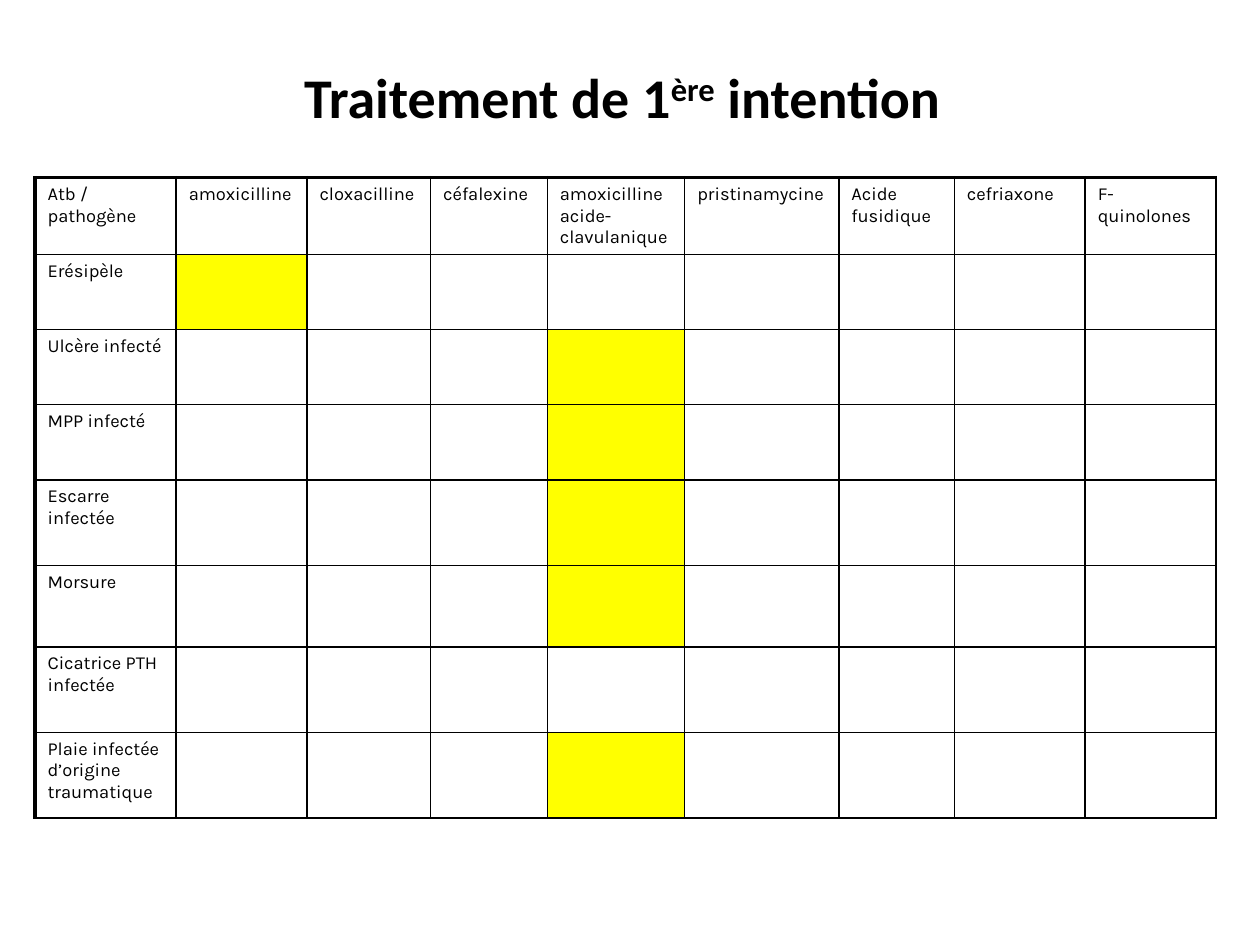
from lxml.etree import SubElement
from pptx import Presentation
from pptx.dml.color import RGBColor
from pptx.enum.text import MSO_ANCHOR, PP_ALIGN
from pptx.oxml.ns import qn
from pptx.util import Pt

hues = {"ink": "000000", "paper": "FFFFFF", "mark": "FFFF00"}
fonts = {
    "title": {"name": "Calibri", "size": Pt(32), "bold": True},
    "cell": {"name": "Karla", "size": Pt(10.5), "bold": False},
}
drugs = ["Atb / pathogène", "amoxicilline", "cloxacilline", "céfalexine",
         "amoxicilline acide-clavulanique", "pristinamycine",
         "Acide fusidique", "cefriaxone", "F-quinolones"]
cases = [("Erésipèle", 1), ("Ulcère infecté", 4), ("MPP infecté", 4),
         ("Escarre infectée", 4), ("Morsure", 4),
         ("Cicatrice PTH infectée", None),
         ("Plaie infectée d’origine traumatique", 4)]
widths = [80.7, 74.7, 70.7, 66.7, 78.5, 88.1, 66, 74.8, 74.8]
heights = [44, 42.9, 42.9, 42.9, 48.9, 46.6, 48.9, 48.9]


def style(run, kind):
    for key, value in fonts[kind].items():
        setattr(run.font, key, value)
    run.font.color.rgb = RGBColor.from_string(hues["ink"])


def border(cell, side, width):
    line = SubElement(cell._tc.get_or_add_tcPr(), qn(f"a:ln{side}"), w=str(Pt(width)))
    fill = SubElement(line, qn("a:solidFill"))
    SubElement(fill, qn("a:srgbClr"), val=hues["ink"])


deck = Presentation()
deck.slide_width, deck.slide_height = Pt(720), Pt(540)
slide = deck.slides.add_slide(deck.slide_layouts[6])

grid = slide.shapes.add_table(len(heights), len(widths), Pt(20), Pt(101.5),
                              Pt(sum(widths)), Pt(sum(heights))).table
grid.first_row = grid.horz_banding = False
for col, width in zip(grid.columns, widths):
    col.width = Pt(width)
for row, height in zip(grid.rows, heights):
    row.height = Pt(height)

rows = [(drugs, None)] + [([name], mark) for name, mark in cases]
for r, (words, mark) in enumerate(rows):
    for c in range(len(widths)):
        cell = grid.cell(r, c)
        sides = {"L": 1 if c else 2.25, "R": 1, "T": 1 if r else 2.25, "B": 1}
        for side, width in sides.items():
            border(cell, side, width)
        cell.fill.solid()
        hue = hues["mark" if c == mark else "paper"]
        cell.fill.fore_color.rgb = RGBColor.from_string(hue)
        if c < len(words):
            run = cell.text_frame.paragraphs[0].add_run()
            run.text = words[c]
            style(run, "cell")

frame = slide.shapes.add_textbox(Pt(0), Pt(20), Pt(711), Pt(70)).text_frame
frame.word_wrap = True
frame.vertical_anchor = MSO_ANCHOR.MIDDLE
title = frame.paragraphs[0]
title.alignment = PP_ALIGN.CENTER
for words, lift in [("Traitement de 1", 0), ("ère", 30000), (" intention", 0)]:
    run = title.add_run()
    run.text = words
    style(run, "title")
    if lift:
        run._r.get_or_add_rPr().set("baseline", str(lift))

deck.save("out.pptx")
